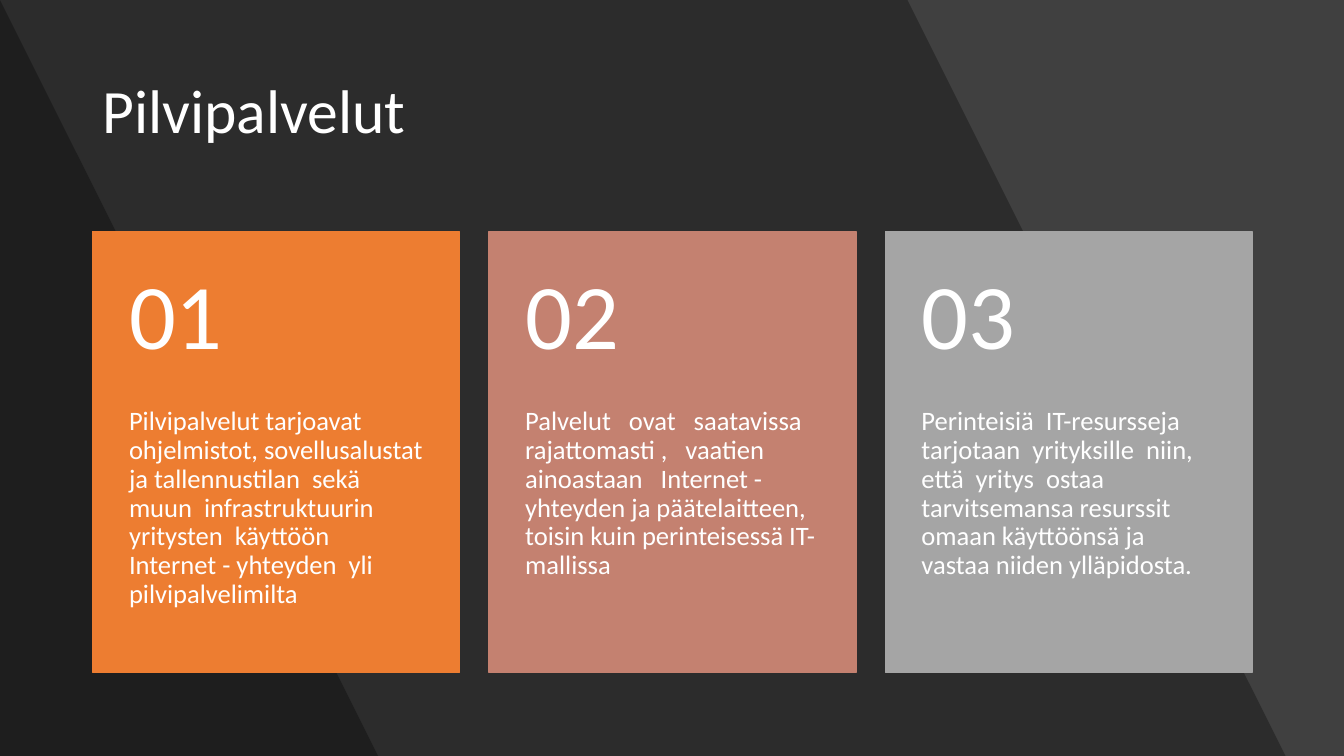
from dataclasses import dataclass

from lxml import etree
from pptx import Presentation
from pptx.dml.color import RGBColor
from pptx.enum.shapes import MSO_SHAPE
from pptx.enum.text import MSO_ANCHOR
from pptx.oxml.ns import qn
from pptx.util import Inches, Pt

RECTANGLE = MSO_SHAPE.RECTANGLE
TOP, MIDDLE = MSO_ANCHOR.TOP, MSO_ANCHOR.MIDDLE


@dataclass(frozen=True)
class Theme:
    font: str = "Calibri"
    background: str = "404040"
    shade: str = "000000"
    shade_alpha: int = 30
    text: str = "FFFFFF"
    cards: tuple = ("ED7D31", "C48170", "A5A5A5")
    title_size: int = 44
    number_size: int = 66
    body_size: int = 19


THEME = Theme()

# Lengths in inches
WIDTH, HEIGHT = 13.33, 7.5
LEFT, CARD_TOP = 0.92, 2.3
CARD_WIDTH, CARD_HEIGHT, GAP = 3.64, 4.37, 0.29
NUMBER_HEIGHT = CARD_HEIGHT * 0.4
PADDING = 0.36

# Top and bottom right corners of the slanted bands
BANDS = ((9.42, 12.89), (0.44, 3.92))

CARD_TEXTS = (
    "Pilvipalvelut tarjoavat ohjelmistot, sovellusalustat ja tallennustilan  sekä   muun  "
    "infrastruktuurin  yritysten  käyttöön  Internet - yhteyden  yli  pilvipalvelimilta",
    "Palvelut   ovat   saatavissa   rajattomasti ,   vaatien   ainoastaan   Internet - "
    "yhteyden ja päätelaitteen, toisin kuin perinteisessä IT-mallissa",
    "Perinteisiä  IT-resursseja  tarjotaan  yrityksille  niin,  että  yritys  ostaa  "
    "tarvitsemansa resurssit omaan käyttöönsä ja vastaa niiden ylläpidosta.",
)


def set_values(target, values):
    for name, value in values.items():
        setattr(target, name, value)


def paint(fill, color):
    fill.solid()
    fill.fore_color.rgb = RGBColor.from_string(color)


def add_band(page, top_right, bottom_right):
    """Draw a translucent band from the left edge to a slanted right side."""
    builder = page.shapes.build_freeform(0, 0, scale=Inches(1))
    builder.add_line_segments(
        [(top_right, 0), (bottom_right, HEIGHT), (0, HEIGHT)], close=True)
    band = builder.convert_to_shape()
    band.shadow.inherit = False
    band.line.fill.background()
    paint(band.fill, THEME.shade)
    color = band.fill._xPr.find(qn("a:solidFill"))[0]
    etree.SubElement(color, qn("a:alpha"), val=str(THEME.shade_alpha * 1000))


def add_text(page, text, area, size, anchor, insets):
    """Add a one-paragraph text box; insets run left, top, right, bottom."""
    box = page.shapes.add_textbox(*map(Inches, area))
    left, top, right, bottom = map(Inches, insets)
    set_values(box.text_frame, {
        "word_wrap": True, "vertical_anchor": anchor,
        "margin_left": left, "margin_top": top,
        "margin_right": right, "margin_bottom": bottom,
    })
    para = box.text_frame.paragraphs[0]
    para.line_spacing = 0.9
    span = para.add_run()
    span.text = text
    set_values(span.font, {"name": THEME.font, "size": Pt(size)})
    span.font.color.rgb = RGBColor.from_string(THEME.text)


def add_card(page, column, color, text):
    left = LEFT + column * (CARD_WIDTH + GAP)
    card = page.shapes.add_shape(
        RECTANGLE, *map(Inches, (left, CARD_TOP, CARD_WIDTH, CARD_HEIGHT)))
    card.shadow.inherit = False
    paint(card.fill, color)
    paint(card.line.fill, color)
    card.line.width = Pt(1)
    add_text(page, text,
             (left, CARD_TOP + NUMBER_HEIGHT, CARD_WIDTH, CARD_HEIGHT - NUMBER_HEIGHT),
             THEME.body_size, TOP, (PADDING, 0, PADDING, PADDING))
    add_text(page, f"{column + 1:02}", (left, CARD_TOP, CARD_WIDTH, NUMBER_HEIGHT),
             THEME.number_size, MIDDLE, (PADDING, PADDING / 2) * 2)


def main():
    deck = Presentation()
    set_values(deck, {"slide_width": Inches(WIDTH), "slide_height": Inches(HEIGHT)})
    page = deck.slides.add_slide(deck.slide_layouts[6])
    paint(page.background.fill, THEME.background)
    for corners in BANDS:
        add_band(page, *corners)
    add_text(page, "Pilvipalvelut", (LEFT, 0.4, WIDTH - 2 * LEFT, 1.45),
             THEME.title_size, MIDDLE, (0.1, 0.05) * 2)
    for column, (color, text) in enumerate(zip(THEME.cards, CARD_TEXTS)):
        add_card(page, column, color, text)
    deck.save("out.pptx")


if __name__ == "__main__":
    main()
